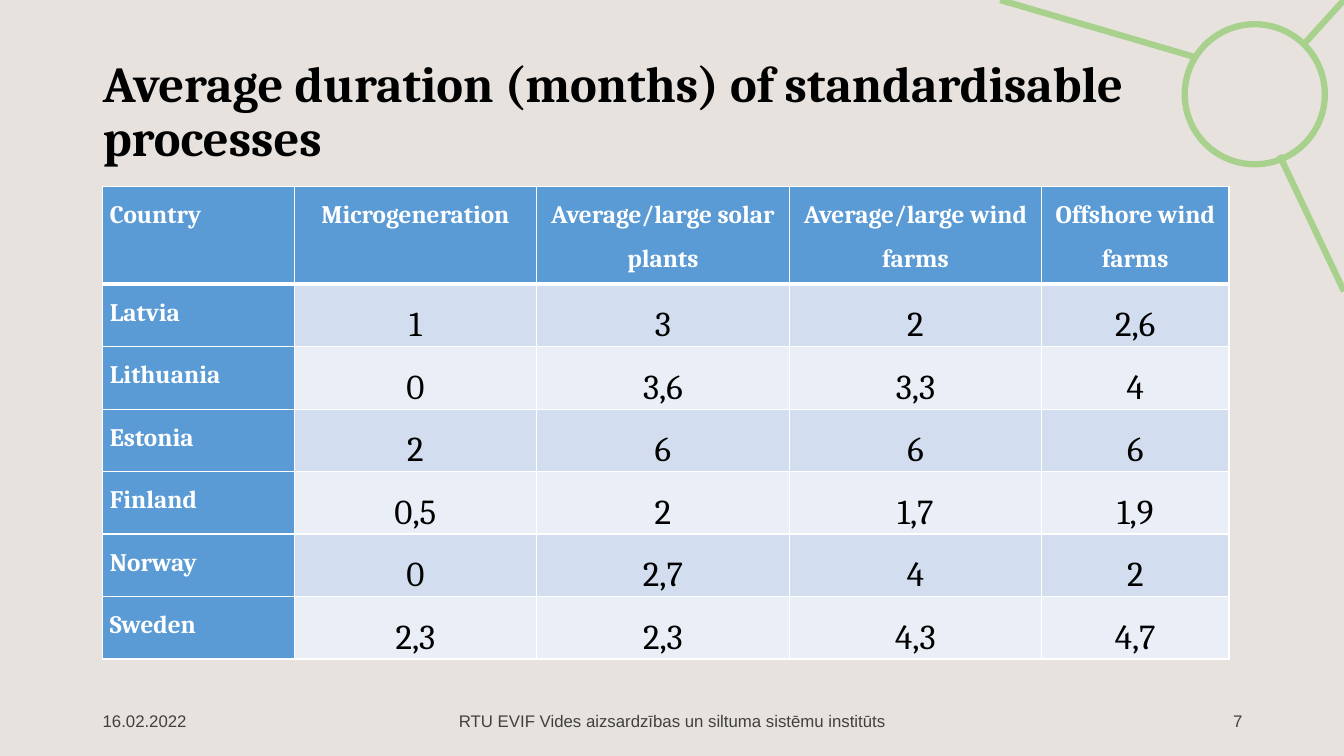
from lxml.etree import SubElement
from pptx import Presentation
from pptx.dml.color import RGBColor
from pptx.enum.shapes import MSO_CONNECTOR, MSO_SHAPE
from pptx.enum.text import MSO_ANCHOR, MSO_AUTO_SIZE, PP_ALIGN
from pptx.oxml.ns import qn
from pptx.util import Inches, Pt

HEADINGS = ["Country", "Microgeneration", "Average/large solar plants",
            "Average/large wind farms", "Offshore wind farms"]
DURATIONS = [
    ["Latvia", "1", "3", "2", "2,6"],
    ["Lithuania", "0", "3,6", "3,3", "4"],
    ["Estonia", "2", "6", "6", "6"],
    ["Finland", "0,5", "2", "1,7", "1,9"],
    ["Norway", "0", "2,7", "4", "2"],
    ["Sweden", "2,3", "2,3", "4,3", "4,7"],
]
COLUMN_WIDTHS = [1.9, 2.4, 2.51, 2.5, 1.86]
ROW_HEIGHTS = [0.97] + [0.62] * len(DURATIONS)


def color(hex_string):
    return RGBColor.from_string(hex_string)


class SlideBuilder:
    serif, sans = "Cambria", "Arial"
    background, ring_green = "E7E2DD", "A9D18E"
    black, white, gray = "000000", "FFFFFF", "404040"
    header_blue, bands = "5B9BD5", ("D2DEEF", "EAEFF7")

    def __init__(self, deck):
        self.slide = deck.slides.add_slide(deck.slide_layouts[5])
        fill = self.slide.background.fill
        fill.solid()
        fill.fore_color.rgb = color(self.background)

    def format(self, para, font, size, hex_color, bold=False,
               align=PP_ALIGN.LEFT, spacing=None):
        para.alignment = align
        para.line_spacing = spacing
        para.font.name = font
        para.font.size = Pt(size)
        para.font.bold = bold
        para.font.color.rgb = color(hex_color)

    def title(self, text, left, top, width, height):
        title = self.slide.shapes.title
        title.left, title.top = Inches(left), Inches(top)
        title.width, title.height = Inches(width), Inches(height)
        frame = title.text_frame
        frame.text = text
        frame.word_wrap = True
        frame.auto_size = MSO_AUTO_SIZE.NONE
        frame.vertical_anchor = MSO_ANCHOR.MIDDLE
        self.format(frame.paragraphs[0], self.serif, 36, self.black, True, spacing=0.9)

    def ring(self, left, top, size):
        ring = self.slide.shapes.add_shape(
            MSO_SHAPE.OVAL, Inches(left), Inches(top), Inches(size), Inches(size))
        ring.shadow.inherit = False
        ring.fill.background()
        ring.line.color.rgb = color(self.ring_green)
        ring.line.width = Pt(4.5)

    def spoke(self, start, end):
        spoke = self.slide.shapes.add_connector(
            MSO_CONNECTOR.STRAIGHT, *map(Inches, start + end))
        spoke.line.color.rgb = color(self.ring_green)
        spoke.line.width = Pt(4.5)
        SubElement(spoke._element.spPr, qn("a:effectLst"))

    def footer(self, text, left, width, align):
        box = self.slide.shapes.add_textbox(
            Inches(left), Inches(6.95), Inches(width), Inches(0.4))
        frame = box.text_frame
        frame.text = text
        frame.word_wrap = True
        frame.vertical_anchor = MSO_ANCHOR.MIDDLE
        self.format(frame.paragraphs[0], self.sans, 12, self.gray, align=align)

    def borders(self, cell, top, bottom):
        properties = cell._tc.get_or_add_tcPr()
        for side, width in (("L", 1), ("R", 1), ("T", top), ("B", bottom)):
            line = SubElement(properties, qn(f"a:ln{side}"), w=str(Pt(width)))
            solid = SubElement(line, qn("a:solidFill"))
            SubElement(solid, qn("a:srgbClr"), val=self.white)

    def cell(self, cell, text, row, column):
        is_label = row == 0 or column == 0
        self.borders(cell, top=3 if row == 1 else 1, bottom=3 if row == 0 else 1)
        cell.fill.solid()
        cell.fill.fore_color.rgb = color(
            self.header_blue if is_label else self.bands[(row - 1) % 2])
        cell.margin_left = cell.margin_right = Inches(0.07)
        cell.margin_top = cell.margin_bottom = 0
        cell.vertical_anchor = MSO_ANCHOR.TOP if is_label else MSO_ANCHOR.MIDDLE
        cell.text = text
        self.format(cell.text_frame.paragraphs[0], self.serif,
                    18 if is_label else 25,
                    self.white if is_label else self.black, is_label,
                    PP_ALIGN.CENTER if column else PP_ALIGN.LEFT, 1.5)

    def table(self, rows, left, top, widths, heights):
        table = self.slide.shapes.add_table(
            len(rows), len(widths), Inches(left), Inches(top),
            Inches(sum(widths)), Inches(sum(heights))).table
        for column, width in zip(table.columns, widths):
            column.width = Inches(width)
        for row, height in zip(table.rows, heights):
            row.height = Inches(height)
        for row, texts in enumerate(rows):
            for column, text in enumerate(texts):
                self.cell(table.cell(row, column), text, row, column)


def main():
    deck = Presentation()
    deck.slide_width, deck.slide_height = Inches(13.33), Inches(7.5)
    page = SlideBuilder(deck)

    # Corner decoration
    page.ring(11.75, 0.24, 1.39)
    for start, end in [((13.33, 2.89), (12.69, 1.54)),
                       ((11.83, 0.56), (9.92, 0)),
                       ((13.33, 0), (12.93, 0.44))]:
        page.spoke(start, end)

    # Title and table of durations
    page.title("Average duration (months) of standardisable processes",
               0.92, 0.4, 10.82, 1.45)
    page.table([HEADINGS] + DURATIONS, 1.02, 1.85, COLUMN_WIDTHS, ROW_HEIGHTS)

    # Footer
    page.footer("16.02.2022", 0.92, 3, PP_ALIGN.LEFT)
    page.footer("RTU EVIF Vides aizsardzības un siltuma sistēmu institūts",
                4.42, 4.5, PP_ALIGN.CENTER)
    page.footer("7", 9.42, 3, PP_ALIGN.RIGHT)

    deck.save("out.pptx")


if __name__ == "__main__":
    main()
